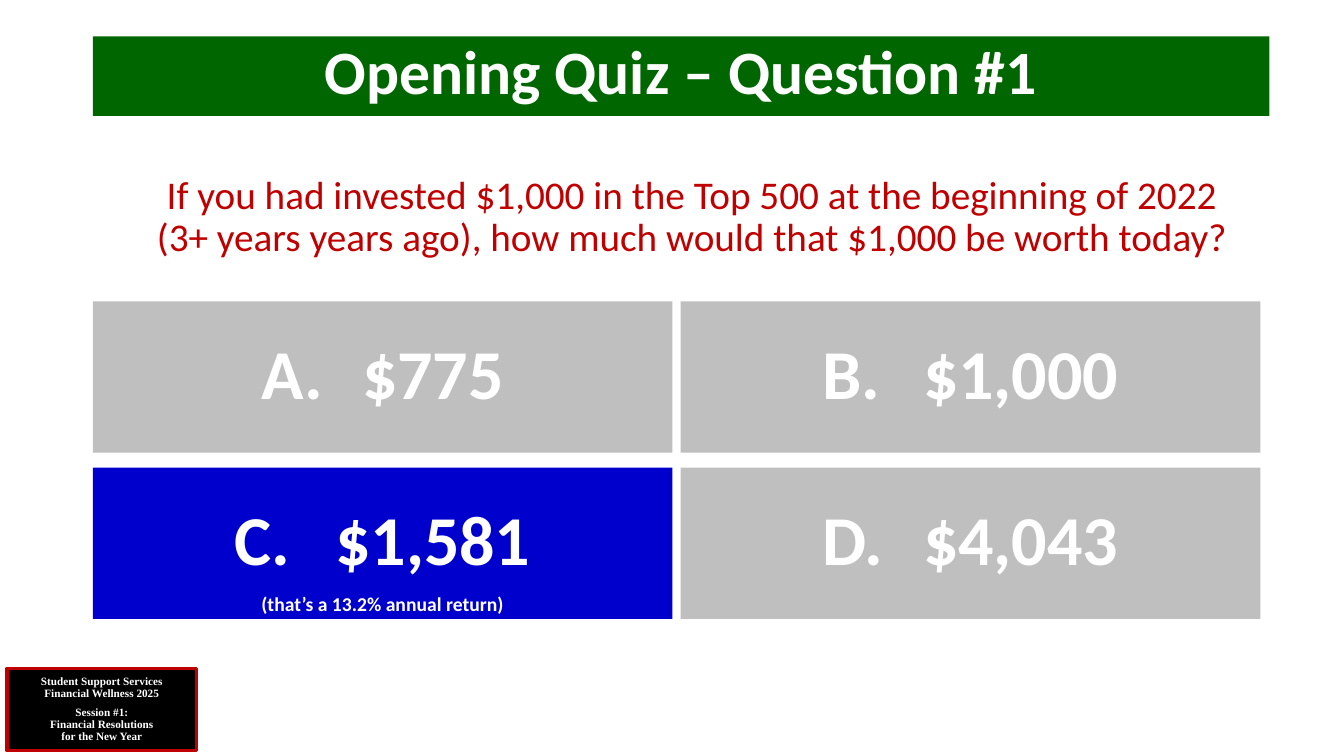
"""Build the answer slide for the first question of the opening quiz."""
import lxml.etree
import pptx
import pptx.dml.color
import pptx.enum.shapes
import pptx.enum.text
import pptx.oxml.ns
import pptx.util

Inches = pptx.util.Inches
Pt = pptx.util.Pt
ANCHOR = pptx.enum.text.MSO_ANCHOR

COLORS = {
    "white": "FFFFFF",
    "banner": "006600",
    "question": "C00000",
    "answer": "BFBFBF",
    "correct": "0000CC",
    "session": "000000",
    "session_border": "C00000",
}
ANSWERS = ["A.\t$775", "B.\t$1,000", "C.\t$1,581", "D.\t$4,043"]
CORRECT_INDEX = 2
CORRECT_NOTE = "(that’s a 13.2% annual return)"
QUESTION = (
    "If you had invested $1,000 in the Top 500 at the beginning of 2022\v"
    "(3+ years years ago), how much would that $1,000 be worth today?"
)
SESSION_LINES = [
    "Student Support Services",
    "Financial Wellness 2025",
    "Session #1:\vFinancial Resolutions\vfor the New Year",
]


def color(name):
    return pptx.dml.color.RGBColor.from_string(COLORS[name])


def set_values(target, values):
    for name, value in values.items():
        setattr(target, name, value)


def place(shape, left, top, width, height):
    set_values(shape, {
        "left": Inches(left), "top": Inches(top),
        "width": Inches(width), "height": Inches(height),
    })


def fill_shape(shape, fill):
    shape.fill.solid()
    shape.fill.fore_color.rgb = color(fill)


def set_frame(shape, top_inset=0.05, anchor=ANCHOR.TOP):
    set_values(shape.text_frame, {
        "word_wrap": True, "auto_size": pptx.enum.text.MSO_AUTO_SIZE.NONE,
        "vertical_anchor": anchor, "margin_top": Inches(top_inset),
        "margin_bottom": 0, "margin_left": Inches(0.1), "margin_right": Inches(0.1),
    })


def write_paragraph(paragraph, text, size, text_color="white", space_before=0,
                    font_name="Calibri", bold=True):
    paragraph.text = text
    set_values(paragraph, {
        "alignment": pptx.enum.text.PP_ALIGN.CENTER, "line_spacing": 0.9,
        "space_before": Pt(space_before), "space_after": Pt(0),
    })
    for run in paragraph.runs:
        set_values(run.font, {"name": font_name, "size": Pt(size), "bold": bold})
        run.font.color.rgb = color(text_color)


def add_box(slide, left, top, width, height, fill):
    shape = slide.shapes.add_shape(
        pptx.enum.shapes.MSO_SHAPE.RECTANGLE,
        Inches(left), Inches(top), Inches(width), Inches(height))
    shape.shadow.inherit = False
    fill_shape(shape, fill)
    shape.line.fill.background()
    return shape


def add_title(slide):
    title = slide.shapes.title
    place(title, 0.92, 0.36, 11.67, 0.79)
    fill_shape(title, "banner")
    set_frame(title)
    write_paragraph(title.text_frame.paragraphs[0], "Opening Quiz – Question #1", 44)


def add_question(slide):
    body = slide.placeholders[1]
    place(body, 0.92, 1.36, 11.88, 1.5)
    set_frame(body, top_inset=0.38)
    paragraph = body.text_frame.paragraphs[0]
    properties = paragraph._p.get_or_add_pPr()
    properties.set("marL", "0")
    properties.set("indent", "0")
    lxml.etree.SubElement(properties, pptx.oxml.ns.qn("a:buNone"))
    write_paragraph(paragraph, QUESTION, 28, "question", bold=False)


def add_answer(slide, index, text):
    row, column = divmod(index, 2)
    correct = index == CORRECT_INDEX
    card = add_box(slide, 0.92 + 5.83 * column, 2.99 + 1.65 * row, 5.75, 1.5,
                   "correct" if correct else "answer")
    set_frame(card, top_inset=0.37)
    write_paragraph(card.text_frame.paragraphs[0], text, 50)
    if correct:
        write_paragraph(card.text_frame.add_paragraph(), CORRECT_NOTE, 14, space_before=10)


def add_session_label(slide):
    label = add_box(slide, 0.07, 6.63, 1.88, 0.82, "session")
    label.line.color.rgb = color("session_border")
    label.line.width = Pt(2.25)
    set_frame(label, top_inset=0, anchor=ANCHOR.MIDDLE)
    frame = label.text_frame
    for index, text in enumerate(SESSION_LINES):
        paragraph = frame.add_paragraph() if index else frame.paragraphs[0]
        write_paragraph(paragraph, text, 8, space_before=5 if index == 2 else 0,
                        font_name="Times New Roman")


def main():
    presentation = pptx.Presentation()
    presentation.slide_width = Inches(13.33)
    presentation.slide_height = Inches(7.5)
    slide = presentation.slides.add_slide(presentation.slide_layouts[1])
    add_title(slide)
    add_question(slide)
    for index, text in enumerate(ANSWERS):
        add_answer(slide, index, text)
    add_session_label(slide)
    presentation.save("out.pptx")


if __name__ == "__main__":
    main()
